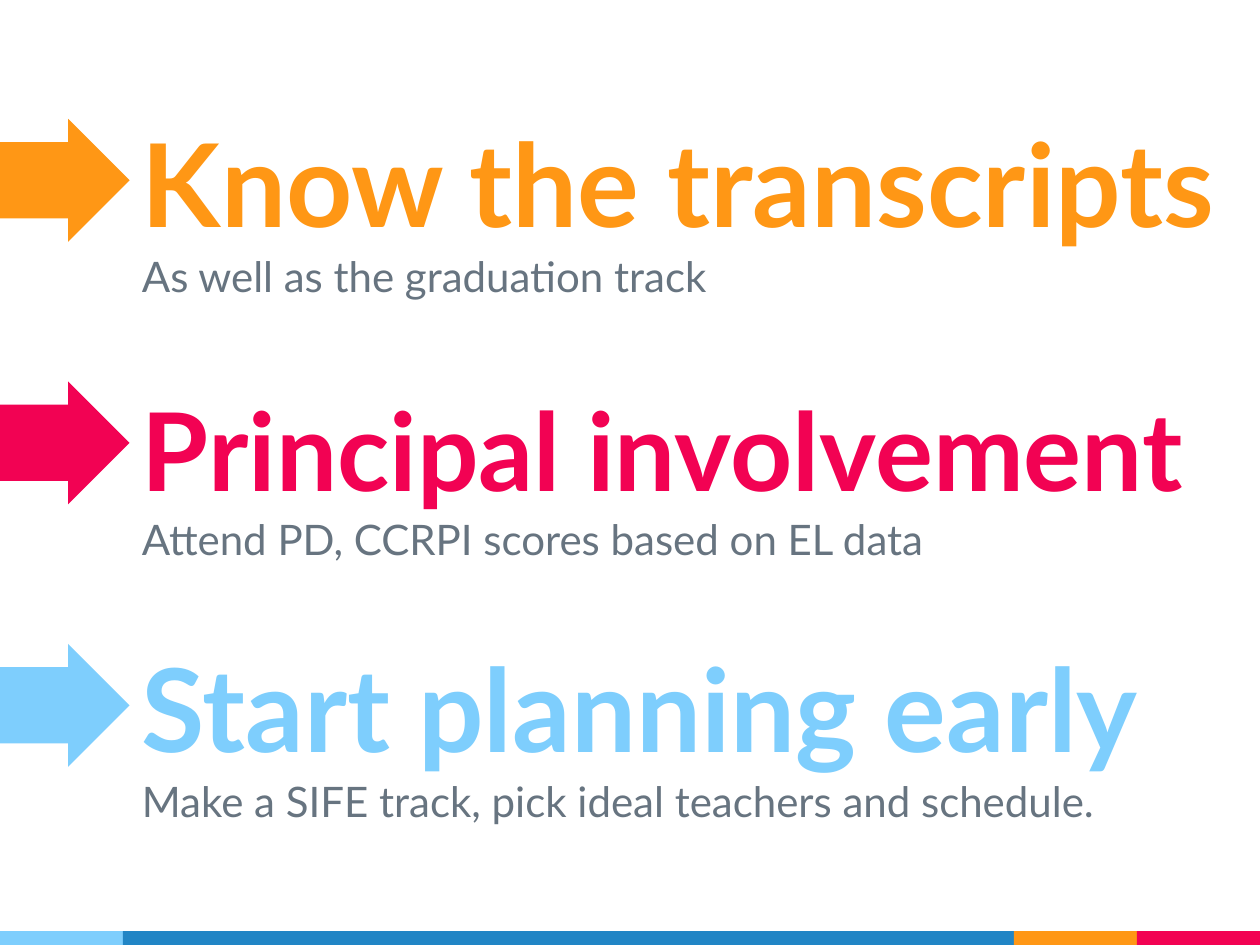
from pptx import Presentation, util as u
from pptx.dml.color import RGBColor
from pptx.enum import shapes, text

ORANGE, PINK, SKY, BLUE, GRAY = "FF9715", "F20253", "7ECEFD", "2185C5", "677480"

# Content: title, subtitle, colour, title size, title width
POINTS = [
    ("Know the transcripts", "As well as the graduation track", ORANGE, 66, 646),
    ("Principal involvement", "Attend PD, CCRPI scores based on EL data", PINK, 62, 666),
    ("Start planning early", "Make a SIFE track, pick ideal teachers and schedule.",
     SKY, 66, 592),
]
FOOTER = [(SKY, 70.3), (BLUE, 509.1), (ORANGE, 70.3), (PINK, 70.3)]  # colour, width

# Layout in points
WIDTH, HEIGHT = 720, 540
ROW_PITCH = 150
TEXT_LEFT = 74
TITLE_TOP, TITLE_HEIGHT = 56.2, 94.2
SUBTITLE_TOP, SUBTITLE_WIDTH, SUBTITLE_HEIGHT = 136.2, 592, 49
ARROW_TOP, ARROW_HEIGHT = 67.9, 70.3
FOOTER_HEIGHT = 7.9


def color(value):
    return RGBColor.from_string(value)


def add_block(slide, kind, box, fill):
    shape = slide.shapes.add_shape(kind, *map(u.Pt, box))
    shape.shadow.inherit = False
    shape.fill.solid()
    shape.fill.fore_color.rgb = color(fill)
    shape.line.fill.background()
    return shape


def add_text(slide, content, box, font_color, font_format, anchor, space_before=0):
    frame = slide.shapes.add_textbox(*map(u.Pt, box)).text_frame
    frame_format = {"word_wrap": True, "vertical_anchor": anchor}
    for side in ("left", "top", "right", "bottom"):
        frame_format[f"margin_{side}"] = u.Pt(7.2)
    for name, value in frame_format.items():
        setattr(frame, name, value)
    paragraph = frame.paragraphs[0]
    paragraph.space_before = u.Pt(space_before)
    run = paragraph.add_run()
    run.text = content
    for name, value in {"name": "Lato", **font_format}.items():
        setattr(run.font, name, value)
    run.font.color.rgb = color(font_color)


presentation = Presentation()
presentation.slide_width, presentation.slide_height = u.Pt(WIDTH), u.Pt(HEIGHT)
slide = presentation.slides.add_slide(presentation.slide_layouts[6])

# Footer stripe
left = 0
for fill, width in FOOTER:
    add_block(slide, shapes.MSO_SHAPE.RECTANGLE,
              (left, HEIGHT - FOOTER_HEIGHT, width, FOOTER_HEIGHT), fill)
    left += width

# One arrow, title and subtitle per point
for row, (title, subtitle, accent, size, title_width) in enumerate(POINTS):
    offset = row * ROW_PITCH
    add_text(slide, title, (TEXT_LEFT, TITLE_TOP + offset, title_width, TITLE_HEIGHT),
             accent, {"size": u.Pt(size), "bold": True}, text.MSO_ANCHOR.BOTTOM)
    add_text(slide, subtitle,
             (TEXT_LEFT, SUBTITLE_TOP + offset, SUBTITLE_WIDTH, SUBTITLE_HEIGHT),
             GRAY, {"size": u.Pt(24)}, text.MSO_ANCHOR.TOP, space_before=6)
    arrow = add_block(slide, shapes.MSO_SHAPE.RIGHT_ARROW,
                      (0, ARROW_TOP + offset, TEXT_LEFT, ARROW_HEIGHT), accent)
    arrow.adjustments[0], arrow.adjustments[1] = 0.62, 0.5

presentation.save("out.pptx")
